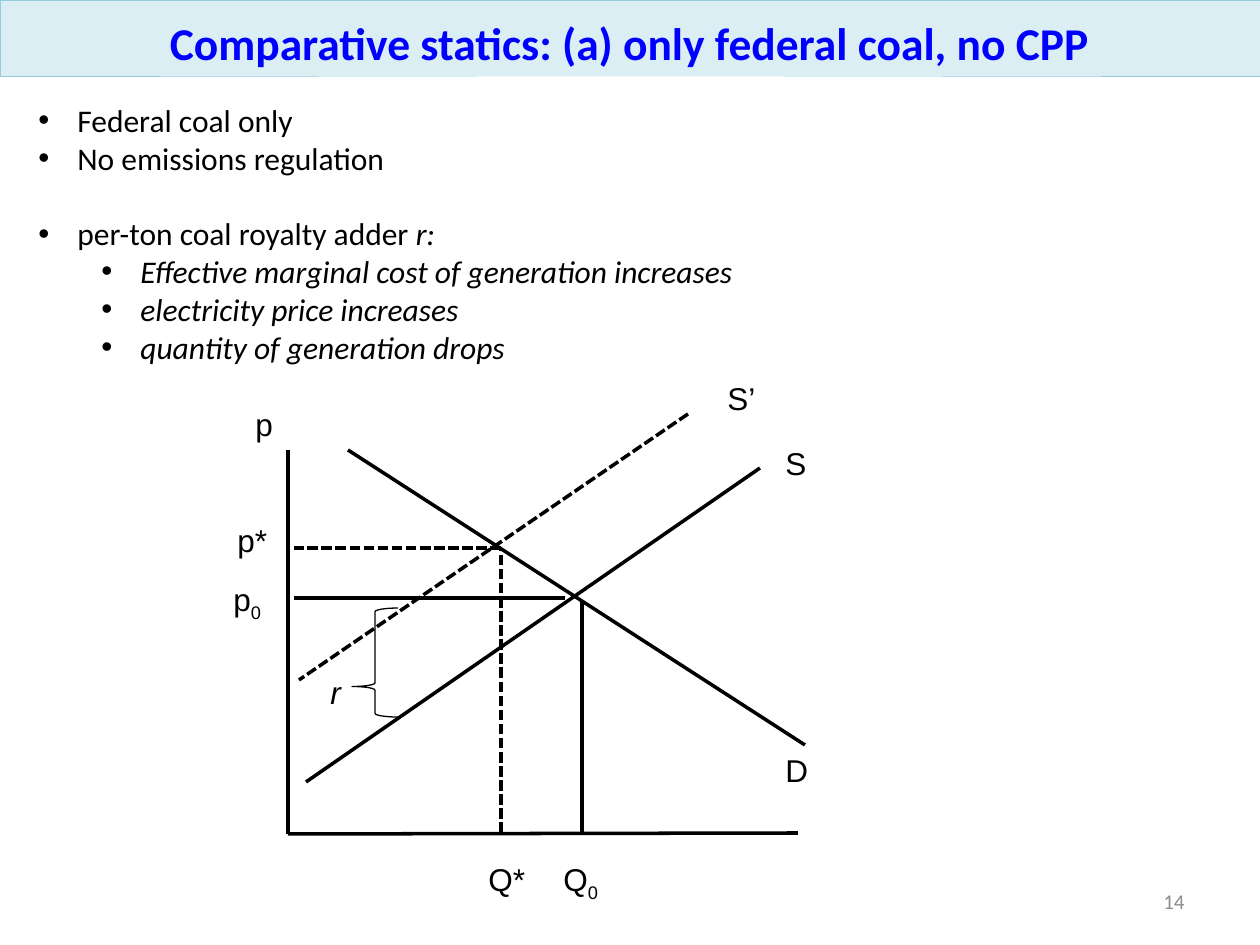
import lxml.etree
import pptx
import pptx.dml.color
import pptx.enum.dml
import pptx.enum.shapes
import pptx.enum.text
import pptx.oxml.ns
import pptx.util

SCALE = 914400 / 126
COLORS = {"ink": "000000", "title": "0000FF", "banner": "DBEEF4",
          "border": "93CDDD", "number": "8C8C8C"}
RGB = {name: pptx.dml.color.RGBColor.from_string(code) for name, code in COLORS.items()}
qn = pptx.oxml.ns.qn
ANCHOR = pptx.enum.text.MSO_ANCHOR
ALIGN = pptx.enum.text.PP_ALIGN
FIT = pptx.enum.text.MSO_AUTO_SIZE.SHAPE_TO_FIT_TEXT
SHAPE = pptx.enum.shapes.MSO_SHAPE


def emu(*lengths):
    return [pptx.util.Emu(round(length * SCALE)) for length in lengths]


def add_span(para, text, size=18, font="Calibri", color="ink", bold=False, italic=False):
    span = para.add_run()
    span.text = text
    span.font.size = pptx.util.Pt(size)
    span.font.name = font
    span.font.color.rgb = RGB[color]
    span.font.bold = bold
    span.font.italic = italic
    return span


deck = pptx.Presentation()
deck.slide_width, deck.slide_height = emu(1260, 945)
page = deck.slides.add_slide(deck.slide_layouts[6])

number_box = page.shapes.add_textbox(*emu(903, 876, 294, 50))
number_box.text_frame.word_wrap = True
number_box.text_frame.vertical_anchor = ANCHOR.MIDDLE
para = number_box.text_frame.paragraphs[0]
para.alignment = ALIGN.RIGHT
add_span(para, "14", size=12, color="number")

banner = page.shapes.add_shape(SHAPE.RECTANGLE, *emu(0, 0, 1260, 76))
banner.shadow.inherit = False
banner.fill.solid()
banner.fill.fore_color.rgb = RGB["banner"]
banner.line.color.rgb = RGB["border"]
banner.line.width = pptx.util.Pt(0.1)
banner.text_frame.word_wrap = True
banner.text_frame.vertical_anchor = ANCHOR.BOTTOM
para = banner.text_frame.paragraphs[0]
para.alignment = ALIGN.CENTER
add_span(para, "Comparative statics: (a) only federal coal, no CPP",
         size=26, color="title", bold=True)

bullets = [
    (0, 0, [("Federal coal only", False)]),
    (0, 0, [("No emissions regulation", False)]),
    (0, 21.5, [("per-ton coal royalty adder ", False), ("r:", True)]),
    (1, 0, [("Effective marginal cost of generation increases", True)]),
    (1, 0, [("electricity price increases", True)]),
    (1, 0, [("quantity of generation drops", True)]),
]
bullet_box = page.shapes.add_textbox(*emu(26, 95, 1075, 280))
bullet_box.text_frame.word_wrap = True
bullet_box.text_frame.auto_size = FIT
for index, (level, gap, parts) in enumerate(bullets):
    frame = bullet_box.text_frame
    para = frame.add_paragraph() if index else frame.paragraphs[0]
    para.level = level
    para.space_before = pptx.util.Pt(gap)
    properties = para._p.get_or_add_pPr()
    indent, hanging = emu(39 + 63 * level, -39)
    properties.set("marL", str(indent))
    properties.set("indent", str(hanging))
    lxml.etree.SubElement(properties, qn("a:buFont")).set("typeface", "Arial")
    lxml.etree.SubElement(properties, qn("a:buChar")).set("char", "•")
    for text, italic in parts:
        add_span(para, text, italic=italic)

diagram = page.shapes.add_group_shape()

lines = [
    (288, 450, 288, 834, False),
    (798, 833, 288, 834, False),
    (760, 468, 306, 782, False),
    (805, 745, 348, 450, False),
    (688, 414, 299, 680, True),
    (501, 548, 294, 548, True),
    (501, 833, 501, 548, True),
    (565, 598, 294, 598, False),
    (582, 600, 582, 833, False),
]
for x1, y1, x2, y2, dashed in lines:
    line = diagram.shapes.add_connector(
        pptx.enum.shapes.MSO_CONNECTOR.STRAIGHT, *emu(x1, y1, x2, y2))
    line.line.color.rgb = RGB["ink"]
    line.line.width = pptx.util.Pt(2)
    if dashed:
        line.line.dash_style = pptx.enum.dml.MSO_LINE.SQUARE_DOT
    lxml.etree.SubElement(line._element.spPr, qn("a:effectLst"))

brace = diagram.shapes.add_shape(SHAPE.LEFT_BRACE, *emu(352, 608, 46, 109))
brace.shadow.inherit = False
brace.adjustments[0] = 0.08
brace.adjustments[1] = 0.72
brace.fill.background()
brace.line.color.rgb = RGB["ink"]
brace.line.width = pptx.util.Pt(0.75)

labels = [
    ("D", "", 773, 745, 48),
    ("Q", "0", 551, 854, 62),
    ("S", "", 773, 438, 47),
    ("S’", "", 715, 373, 54),
    ("p", "", 243, 399, 43),
    ("p*", "", 225, 515, 55),
    ("Q*", "", 476, 854, 63),
    ("p", "0", 221, 574, 55),
    ("r", "", 318, 667, 37),
]
for text, subscript, left, top, width in labels:
    box = diagram.shapes.add_textbox(*emu(left, top, width, 50))
    box.text_frame.word_wrap = False
    box.text_frame.auto_size = FIT
    para = box.text_frame.paragraphs[0]
    add_span(para, text, font="Arial", italic=text == "r")
    if subscript:
        span = add_span(para, subscript, font="Arial")
        span._r.get_or_add_rPr().set("baseline", "-25000")

deck.save("out.pptx")
